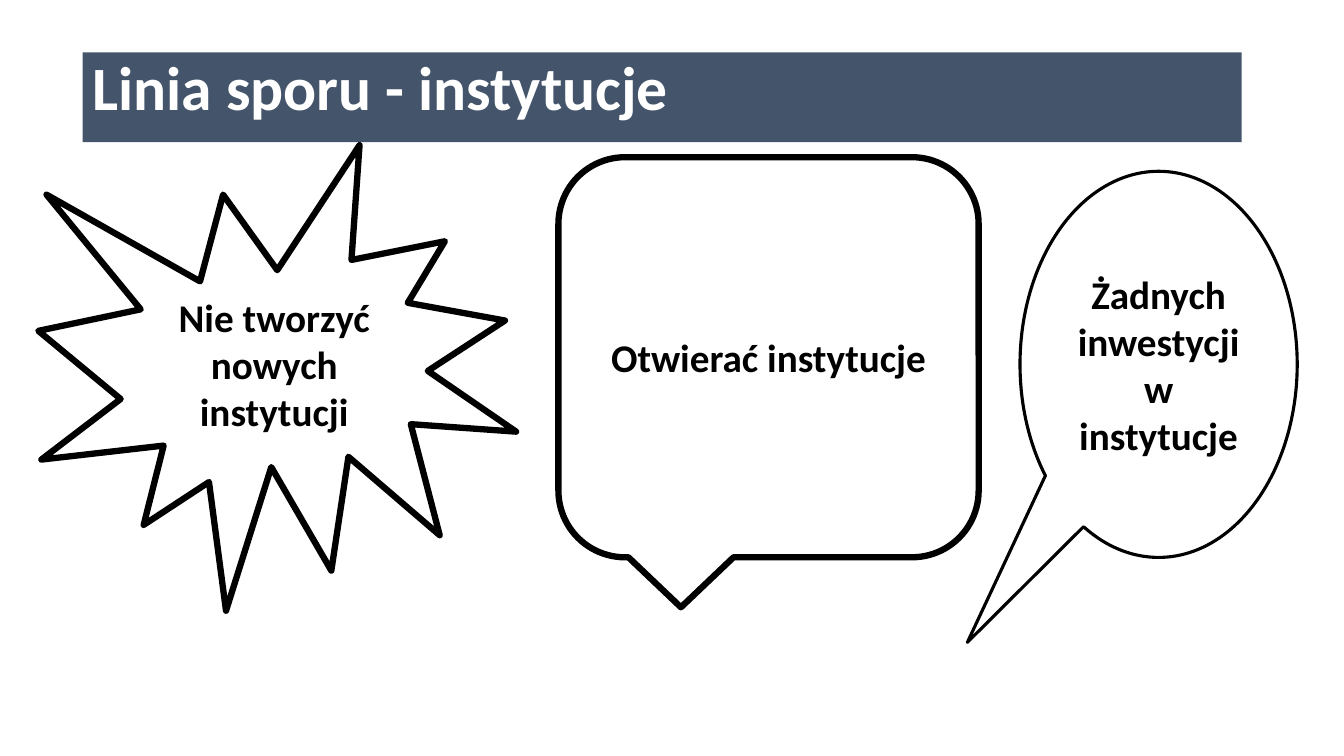
from dataclasses import dataclass

from pptx import Presentation
from pptx.dml.color import RGBColor
from pptx.enum.shapes import MSO_SHAPE
from pptx.enum.text import MSO_ANCHOR, MSO_AUTO_SIZE, PP_ALIGN
from pptx.util import Pt

BURST = MSO_SHAPE.EXPLOSION1
ROUNDED = MSO_SHAPE.ROUNDED_RECTANGULAR_CALLOUT
OVAL = MSO_SHAPE.OVAL_CALLOUT
TOP, MIDDLE = MSO_ANCHOR.TOP, MSO_ANCHOR.MIDDLE
LEFT, CENTER = PP_ALIGN.LEFT, PP_ALIGN.CENTER
NO_AUTOFIT = MSO_AUTO_SIZE.NONE
TITLE_ONLY = 5


@dataclass(frozen=True)
class Theme:
    font: str = "Calibri"
    title_size: float = 44
    body_size: float = 28
    bar: RGBColor = RGBColor(0x44, 0x54, 0x6A)
    paper: RGBColor = RGBColor(0xFF, 0xFF, 0xFF)
    ink: RGBColor = RGBColor(0, 0, 0)


@dataclass(frozen=True)
class Callout:
    kind: MSO_SHAPE
    text: str
    box: tuple[float, float, float, float]
    line: float
    tail: tuple[float, ...] = ()


THEME = Theme()

# Left, top, width and height in points
TITLE_BOX = (59, 37.4, 828, 64.1)
CALLOUTS = [
    Callout(BURST, "Nie tworzyć nowych instytucji", (27.4, 103.7, 341.3, 332.6), 4.5),
    Callout(ROUNDED, "Otwierać instytucje", (398.9, 112.3, 300.2, 285.8), 4.5),
    Callout(OVAL, "Żadnych inwestycji w instytucje", (728.6, 122.4, 198, 275.8), 2.25,
            (-0.69, 0.72)),
]


def write(sp, text: str, size: float, color: RGBColor, align: PP_ALIGN,
          anchor: MSO_ANCHOR) -> None:
    """Fill a shape with one bold paragraph."""
    tf = sp.text_frame
    tf.text = text
    tf.word_wrap = True
    tf.auto_size = NO_AUTOFIT
    tf.vertical_anchor = anchor
    p = tf.paragraphs[0]
    p.alignment = align
    p.font.name = THEME.font
    p.font.size = Pt(size)
    p.font.bold = True
    p.font.color.rgb = color


def paint(sp, color: RGBColor) -> None:
    sp.fill.solid()
    sp.fill.fore_color.rgb = color


def add_title(s, text: str) -> None:
    sp = s.shapes.title
    sp.left, sp.top, sp.width, sp.height = map(Pt, TITLE_BOX)
    paint(sp, THEME.bar)
    write(sp, text, THEME.title_size, THEME.paper, LEFT, TOP)
    sp.text_frame.paragraphs[0].line_spacing = 0.9


def add_callout(s, callout: Callout) -> None:
    sp = s.shapes.add_shape(callout.kind, *map(Pt, callout.box))
    sp.shadow.inherit = False
    for i, value in enumerate(callout.tail):
        sp.adjustments[i] = value
    paint(sp, THEME.paper)
    sp.line.color.rgb = THEME.ink
    sp.line.width = Pt(callout.line)
    write(sp, callout.text, THEME.body_size, THEME.ink, CENTER, MIDDLE)


def main() -> None:
    prs = Presentation()
    prs.slide_width, prs.slide_height = Pt(960), Pt(540)
    s = prs.slides.add_slide(prs.slide_layouts[TITLE_ONLY])

    # Title bar
    add_title(s, "Linia sporu - instytucje")

    # Three positions in the dispute
    for callout in CALLOUTS:
        add_callout(s, callout)

    prs.save("out.pptx")


if __name__ == "__main__":
    main()
